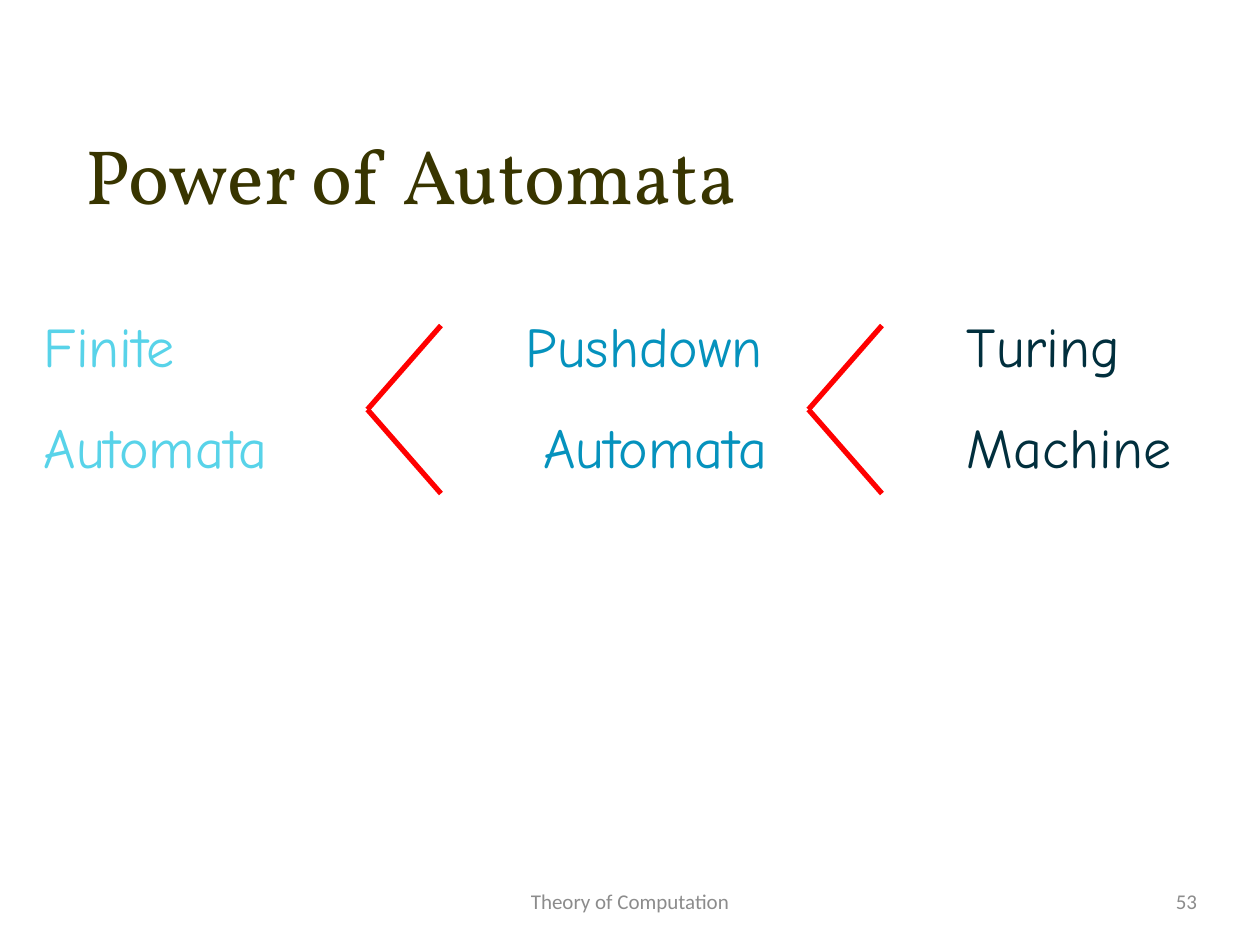
from pptx import Presentation
from pptx import util as u
from pptx.dml.color import RGBColor
from pptx.enum import text

Pt = u.Pt
LEFT, MID, RIGHT = text.PP_ALIGN.LEFT, text.PP_ALIGN.CENTER, text.PP_ALIGN.RIGHT


def tint(code):
    return RGBColor.from_string(code)


def label(slide, box, lines, font, size, color, align=LEFT, gap=1.0,
          lead=0, mid=True, shift=0):
    """Add a text box with one paragraph per line; shift indents the last."""
    frame = slide.shapes.add_textbox(*map(Pt, box)).text_frame
    frame.word_wrap = True
    frame.margin_left = frame.margin_right = 0
    frame.margin_top = frame.margin_bottom = 0
    frame.vertical_anchor = text.MSO_ANCHOR.MIDDLE if mid else text.MSO_ANCHOR.TOP
    frame.text = "\n".join(lines)
    for para in frame.paragraphs:
        para.alignment = align
        para.line_spacing = gap
        for run in para.runs:
            run.font.name = font
            run.font.size = Pt(size)
            run.font.color.rgb = tint(color)
    frame.paragraphs[0].space_before = Pt(lead)
    if shift:
        frame.paragraphs[-1]._p.get_or_add_pPr().set("marL", str(Pt(shift)))


def less(slide, left, top, wide, high):
    """Draw a less-than sign from two strokes that meet at its tip."""
    right, tip = left + wide, (Pt(left), Pt(top + high / 2))
    pen = slide.shapes.build_freeform(Pt(right), Pt(top))
    pen.add_line_segments([tip], close=False)
    pen.move_to(*tip)
    pen.add_line_segments([(Pt(right), Pt(top + high))], close=False)
    sign = pen.convert_to_shape()
    sign.shadow.inherit = False
    sign.fill.background()
    sign.line.color.rgb = tint("FF0000")
    sign.line.width = Pt(3)


def main():
    deck = Presentation()
    deck.slide_width, deck.slide_height = Pt(720), Pt(540)
    slide = deck.slides.add_slide(deck.slide_layouts[6])

    # Title
    label(slide, (42.5, 72, 385, 54), ["Power of Automata"],
          "Vollkorn", 44, "383500", MID)

    # Machine classes, weakest first
    kinds = [
        (25, 147, ["Finite", "Automata"], "58D3E9", 0),
        (300.5, 147, ["Pushdown", "Automata"], "0592BD", 10),
        (552.5, 125, ["Turing", "Machine"], "012F3D", 0),
    ]
    for left, wide, words, color, shift in kinds:
        label(slide, (left, 159, wide, 117), words, "Comic Neue", 32, color,
              gap=1.5, lead=1, mid=False, shift=shift)

    # Signs between the classes
    for left in (210, 462):
        less(slide, left, 186, 42, 96)

    # Footer and slide number
    for left, wide, words, align in [(246, 228, "Theory of Computation", MID),
                                     (516, 168, "53", RIGHT)]:
        label(slide, (left, 500.5, wide, 29), [words],
              "Calibri", 12, "8C8C8C", align)

    deck.save("out.pptx")


if __name__ == "__main__":
    main()
